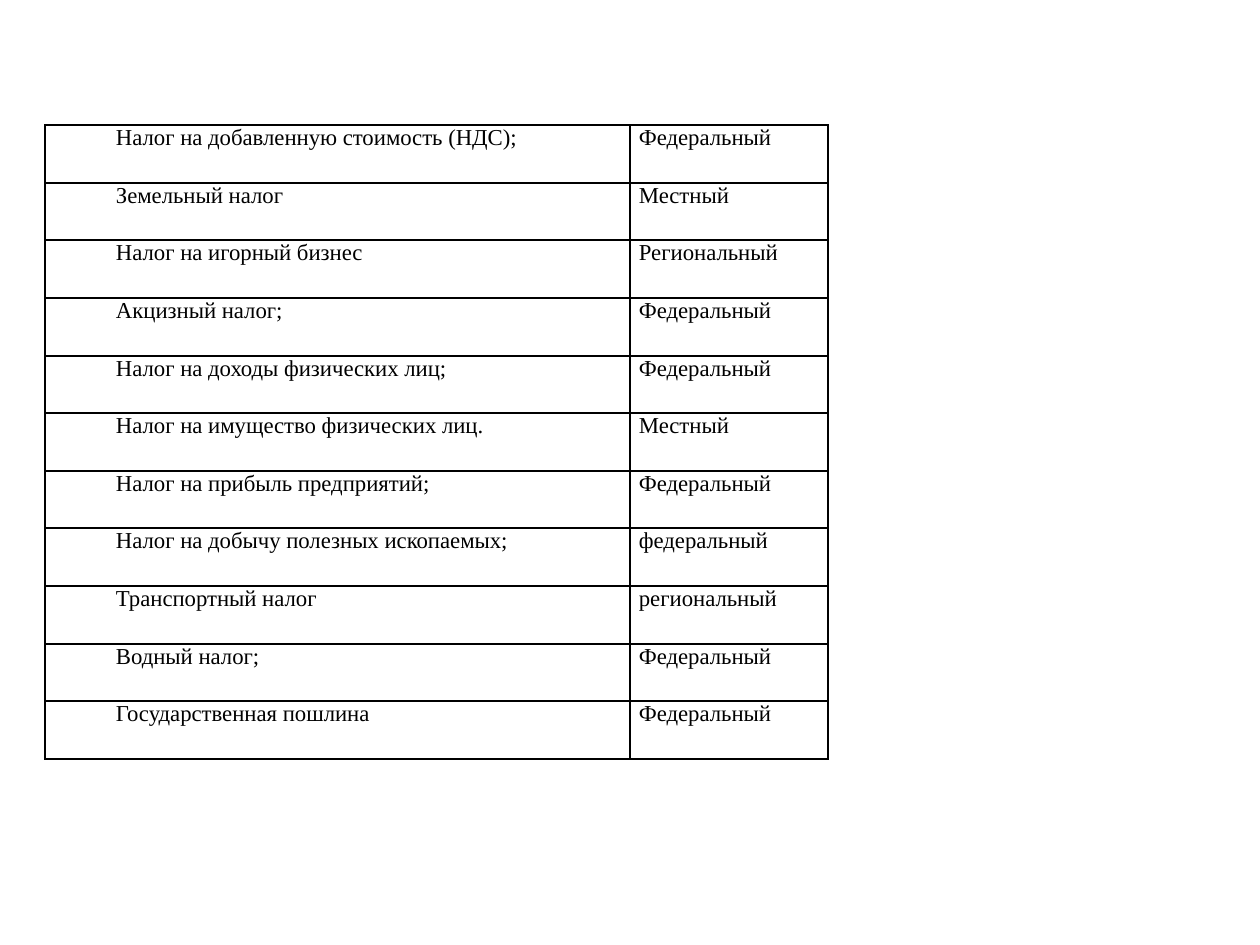
from dataclasses import dataclass

from lxml import etree
from pptx import Presentation
from pptx import util as u
from pptx.dml.color import RGBColor
from pptx.enum import text
from pptx.oxml.ns import qn


@dataclass(frozen=True)
class Theme:
    ink: str = "000000"
    paper: str = "FFFFFF"
    font: str = "Times New Roman"
    size: int = 13
    border: int = 1


theme = Theme()
SCALE = 914400 / 126


def px(length):
    return u.Emu(round(length * SCALE))


def add_borders(cell):
    properties = cell._tc.get_or_add_tcPr()
    for side in ("lnL", "lnR", "lnT", "lnB"):
        line = etree.SubElement(properties, qn(f"a:{side}"), w=str(u.Pt(theme.border)))
        fill = etree.SubElement(line, qn("a:solidFill"))
        etree.SubElement(fill, qn("a:srgbClr"), val=theme.ink)


taxes = [
    ("Налог на добавленную стоимость (НДС);", "Федеральный"),
    ("Земельный налог", "Местный"),
    ("Налог на игорный бизнес", "Региональный"),
    ("Акцизный налог;", "Федеральный"),
    ("Налог на доходы физических лиц;", "Федеральный"),
    ("Налог на имущество физических лиц.", "Местный"),
    ("Налог на прибыль предприятий;", "Федеральный"),
    ("Налог на добычу полезных ископаемых;", "федеральный"),
    ("Транспортный налог", "региональный"),
    ("Водный налог;", "Федеральный"),
    ("Государственная пошлина", "Федеральный"),
]
column_widths = (585, 198)
first_line_indents = (62, 0)
table_height = 634

presentation = Presentation()
presentation.slide_width = px(1260)
presentation.slide_height = px(945)
slide = presentation.slides.add_slide(presentation.slide_layouts[6])
slide.background.fill.solid()
slide.background.fill.fore_color.rgb = RGBColor.from_string(theme.paper)

table = slide.shapes.add_table(
    len(taxes), len(column_widths), px(45), px(125), px(sum(column_widths)), px(table_height)
).table
table.first_row = False
table.horz_banding = False
for column, width in zip(table.columns, column_widths):
    column.width = px(width)

row_edges = [round(table_height * i / len(taxes)) for i in range(len(taxes) + 1)]
for row, top, bottom, labels in zip(table.rows, row_edges, row_edges[1:], taxes):
    row.height = px(bottom - top)
    for cell, label, indent in zip(row.cells, labels, first_line_indents):
        cell.margin_left = cell.margin_right = px(9)
        cell.margin_top = cell.margin_bottom = 0
        cell.vertical_anchor = text.MSO_ANCHOR.TOP
        add_borders(cell)
        cell.fill.background()
        cell.text = label
        paragraph = cell.text_frame.paragraphs[0]
        paragraph.alignment = text.PP_ALIGN.JUSTIFY
        if indent:
            paragraph._p.get_or_add_pPr().set("indent", str(px(indent)))
        paragraph.font.name = theme.font
        paragraph.font.size = u.Pt(theme.size)
        paragraph.font.color.rgb = RGBColor.from_string(theme.ink)

presentation.save("out.pptx")
